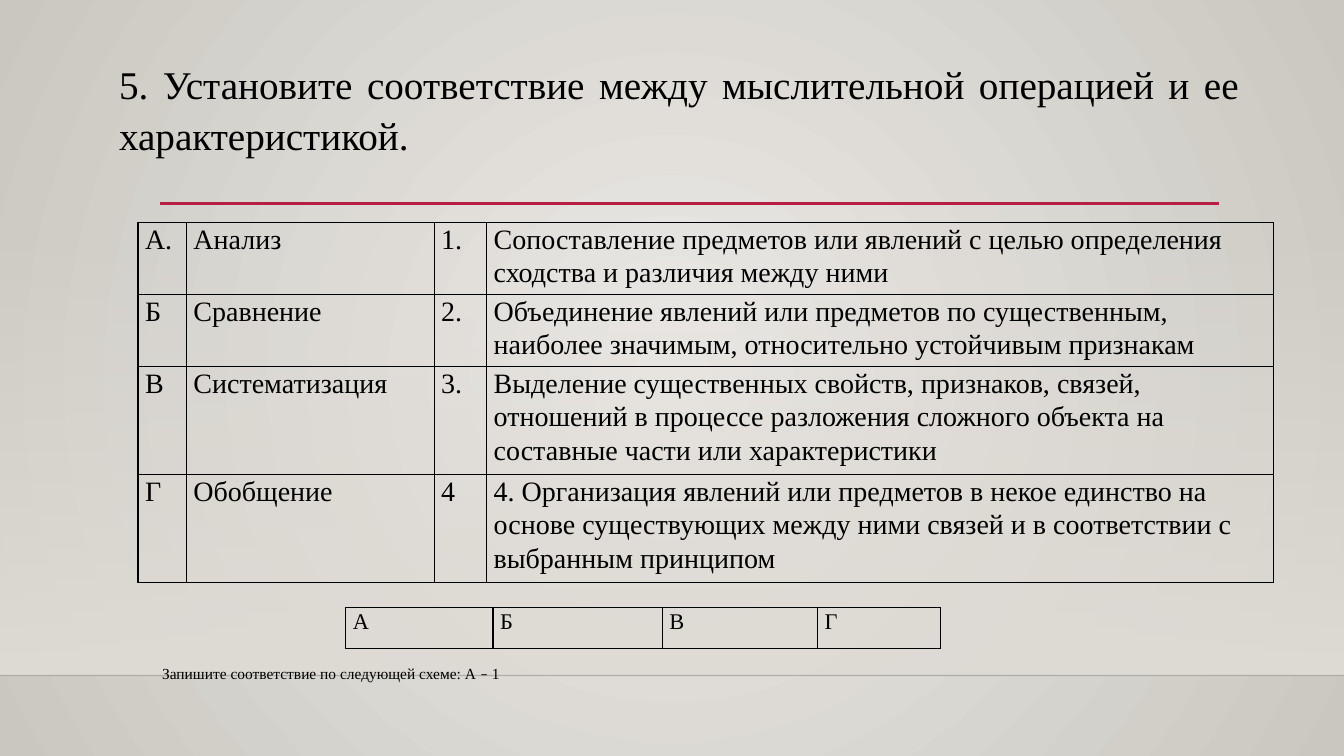
from lxml.etree import SubElement
from pptx import Presentation
from pptx.dml.color import RGBColor
from pptx.enum.shapes import MSO_CONNECTOR, MSO_SHAPE
from pptx.enum.text import MSO_ANCHOR, MSO_AUTO_SIZE, PP_ALIGN
from pptx.oxml import parse_xml
from pptx.oxml.ns import nsdecls, qn
from pptx.util import Pt

WIDTH, HEIGHT = 960, 540
TITLE_ONLY = 5
SERIF = "Times New Roman"
BLACK = "000000"


def color(value):
    return RGBColor.from_string(value)


def gradient(stops, direction):
    """Gradient fill element from (position, colour, opacity) in percent."""
    marks = "".join(
        f'<a:gs pos="{position * 1000}"><a:srgbClr val="{value}">'
        f'<a:alpha val="{opacity * 1000}"/></a:srgbClr></a:gs>'
        for position, value, opacity in stops)
    return parse_xml(f'<a:gradFill {nsdecls("a")} rotWithShape="1">'
                     f'<a:gsLst>{marks}</a:gsLst>{direction}</a:gradFill>')


def set_format(target, values):
    for name, value in values.items():
        setattr(target, name, value)


class SlideBuilder:
    def __init__(self, deck):
        self.page = deck.slides.add_slide(deck.slide_layouts[TITLE_ONLY])
        self.shapes = self.page.shapes

    def add_text(self, para, spans, size, **layout):
        set_format(para, layout)
        for text, font in spans:
            span = para.add_run()
            span.text = text
            set_format(span.font, {"name": font, "size": Pt(size)})
            span.font.color.rgb = color(BLACK)

    def background(self, stops):
        self.page.background.fill.gradient()
        plain = self.page.element.find(".//" + qn("a:gradFill"))
        center = ('<a:path path="circle"><a:fillToRect l="50000" t="50000" '
                  'r="50000" b="50000"/></a:path>')
        plain.getparent().replace(plain, gradient(stops, center))

    def band(self, frame, stops):
        band = self.shapes.add_shape(MSO_SHAPE.RECTANGLE, *map(Pt, frame))
        band.shadow.inherit = False
        band.line.fill.background()
        band.fill.gradient()
        plain = band.element.spPr.find(qn("a:gradFill"))
        down = '<a:lin ang="5400000" scaled="0"/>'
        plain.getparent().replace(plain, gradient(stops, down))

    def rule(self, left, right, top, value, weight, opacity=100):
        rule = self.shapes.add_connector(
            MSO_CONNECTOR.STRAIGHT, Pt(left), Pt(top), Pt(right), Pt(top))
        rule.line.width = Pt(weight)
        rule.line.color.rgb = color(value)
        properties = rule.element.spPr
        if opacity < 100:
            tint = properties.find(".//" + qn("a:srgbClr"))
            SubElement(tint, qn("a:alpha"), val=str(opacity * 1000))
        SubElement(properties, qn("a:effectLst"))

    def title(self, text, frame, size):
        title = self.shapes.title
        set_format(title, dict(zip(("left", "top", "width", "height"),
                                   map(Pt, frame))))
        set_format(title.text_frame, {
            "word_wrap": True, "vertical_anchor": MSO_ANCHOR.TOP,
            "auto_size": MSO_AUTO_SIZE.SHAPE_TO_FIT_TEXT})
        self.add_text(title.text_frame.paragraphs[0], [(text, SERIF)], size,
                      alignment=PP_ALIGN.JUSTIFY, line_spacing=1.07,
                      space_before=Pt(0), space_after=Pt(8))

    def note(self, spans, frame, size):
        box = self.shapes.add_textbox(*map(Pt, frame))
        set_format(box.text_frame, {
            "word_wrap": False, "vertical_anchor": MSO_ANCHOR.MIDDLE,
            "auto_size": MSO_AUTO_SIZE.SHAPE_TO_FIT_TEXT})
        self.add_text(box.text_frame.paragraphs[0], spans, size)

    def table(self, rows, left, top, widths, heights, size):
        table = self.shapes.add_table(
            len(rows), len(widths), Pt(left), Pt(top),
            Pt(sum(widths)), Pt(sum(heights))).table
        set_format(table, {"first_row": False, "horz_banding": False})
        for column, width in zip(table.columns, widths):
            column.width = Pt(width)
        for row, height, texts in zip(table.rows, heights, rows):
            row.height = Pt(height)
            for cell, text in zip(row.cells, texts):
                self.cell(cell, text, size)

    def cell(self, cell, text, size):
        set_format(cell, {"margin_left": Pt(5), "margin_right": Pt(5),
                          "margin_top": Pt(0), "margin_bottom": Pt(0)})
        properties = cell._tc.get_or_add_tcPr()
        for side in "LRTB":
            border = SubElement(properties, qn(f"a:ln{side}"), w=str(Pt(1)))
            solid = SubElement(border, qn("a:solidFill"))
            SubElement(solid, qn("a:srgbClr"), val=BLACK)
        cell.fill.background()
        self.add_text(cell.text_frame.paragraphs[0], [(text, SERIF)], size,
                      line_spacing=1.07)


def main():
    deck = Presentation()
    deck.slide_width, deck.slide_height = Pt(WIDTH), Pt(HEIGHT)
    slide = SlideBuilder(deck)

    # Backdrop
    slide.background([(0, "ECEAE7", 100), (100, "CAC7C1", 100)])
    slide.band((0, 159, WIDTH, 323.5),
               [(0, "DFDBD5", 0), (100, "DFDBD5", 100)])
    slide.rule(0, WIDTH, 482.5, "000001", 1, opacity=20)
    slide.rule(114.5, 871, 145.3, "B71E42", 2.5)

    # Question
    slide.title("5. Установите соответствие между мыслительной операцией "
                "и ее характеристикой.", (77.8, 37.4, 814.3, 80), 28)

    # Operations and their descriptions
    operations = [
        ("А.", "Анализ", "1.",
         "Сопоставление предметов или явлений с целью определения сходства "
         "и различия между ними"),
        ("Б", "Сравнение", "2.",
         "Объединение явлений или предметов по существенным, наиболее "
         "значимым, относительно устойчивым признакам"),
        ("В", "Систематизация", "3.",
         "Выделение существенных свойств, признаков, связей, отношений в "
         "процессе разложения сложного объекта на составные части или "
         "характеристики"),
        ("Г", "Обобщение", "4",
         "4. Организация явлений или предметов в некое единство на основе "
         "существующих между ними связей и в соответствии с выбранным "
         "принципом"),
    ]
    slide.table(operations, 98.6, 159, (34.6, 177, 37.5, 562.3),
                (47.5, 49.7, 72, 72), 20)

    # Answer grid
    slide.table(["АБВГ"], 247, 434, (105.2, 121, 110.8, 87.8), (29.5,), 16)
    slide.note([("Запишите соответствие по следующей схеме: А ", SERIF),
                ("–", "Calibri"), (" 1", SERIF)],
               (108.7, 463, WIDTH, 36), 11)

    deck.save("out.pptx")


if __name__ == "__main__":
    main()
